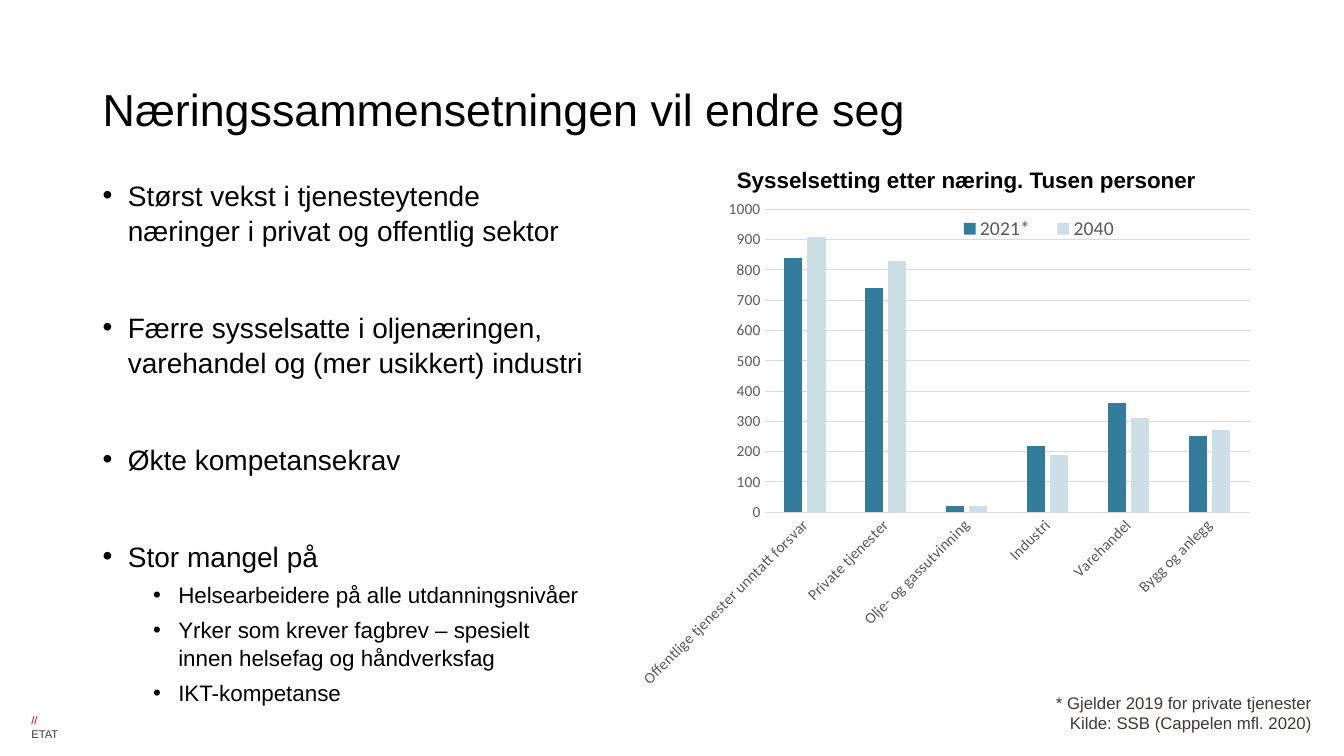
from lxml import etree
from pptx import Presentation
from pptx.chart.data import CategoryChartData
from pptx.dml.color import RGBColor
from pptx.enum import chart as kinds, text as enums
from pptx.oxml import ns
from pptx.util import Inches, Pt

BLACK = RGBColor(0, 0, 0)
BROWN = RGBColor(0x3E, 0x38, 0x32)
RED = RGBColor(0xC3, 0, 0)
GREY = RGBColor(0x59, 0x59, 0x59)
RULE = RGBColor(0xD9, 0xD9, 0xD9)
TEAL = RGBColor(0x33, 0x7C, 0x9B)
PALE = RGBColor(0xCC, 0xDE, 0xE6)

POINTS = [
    (0, "Størst vekst i tjenesteytende næringer i privat og offentlig sektor"),
    (0, "Færre sysselsatte i oljenæringen, varehandel og (mer usikkert) industri"),
    (0, "Økte kompetansekrav"),
    (0, "Stor mangel på"),
    (1, "Helsearbeidere på alle utdanningsnivåer"),
    (1, "Yrker som krever fagbrev – spesielt innen helsefag og håndverksfag"),
    (1, "IKT-kompetanse"),
]
SECTORS = ["Offentlige tjenester unntatt forsvar", "Private tjenester",
           "Olje- og gassutvinning", "Industri", "Varehandel", "Bygg og anlegg"]
YEARS = [("2021*", TEAL, (840, 740, 20, 220, 360, 250)),
         ("2040", PALE, (910, 830, 20, 190, 310, 270))]


def set_font(font, size, color, name="Arial", bold=False):
    font.size, font.name, font.bold = Pt(size), name, bold
    font.color.rgb = color


def add_frame(slide, box, inset=(0.1, 0.05), anchor=enums.MSO_ANCHOR.TOP):
    frame = slide.shapes.add_textbox(*map(Inches, box)).text_frame
    frame.word_wrap = True
    frame.vertical_anchor = anchor
    frame.margin_left = frame.margin_right = Inches(inset[0])
    frame.margin_top = frame.margin_bottom = Inches(inset[1])
    return frame


def write(para, words, size=12, color=BLACK, bold=False, align=None,
          before=0, spacing=None):
    run = para.add_run()
    run.text = words
    set_font(run.font, size, color, bold=bold)
    para.alignment = align
    para.space_before = Pt(before)
    if spacing:
        para.line_spacing = spacing
    return run


def add_bullet(para, left):
    props = para._p.get_or_add_pPr()
    props.set("marL", str(Inches(left)))
    props.set("indent", str(Inches(-0.25)))
    font = etree.SubElement(props, ns.qn("a:buFont"))
    font.set("typeface", "Arial")
    etree.SubElement(props, ns.qn("a:buChar")).set("char", "•")


def add_title(slide, box):
    frame = add_frame(slide, box, anchor=enums.MSO_ANCHOR.MIDDLE)
    write(frame.paragraphs[0], "Næringssammensetningen vil endre seg",
          size=32, spacing=0.9)


def add_points(slide, box):
    frame = add_frame(slide, box)
    for i, (level, words) in enumerate(POINTS):
        para = frame.paragraphs[0] if i == 0 else frame.add_paragraph()
        para.level = level
        add_bullet(para, 0.75 if level else 0.25)
        before = 0 if i == 0 else 5 if level else 44
        write(para, words, size=16 if level else 20, before=before, spacing=1.05)


def place(parent, index, left, top, width, height, inner=False):
    """Fix the layout of a chart part, as shares of the chart's size."""
    for old in parent.findall(ns.qn("c:layout")):
        parent.remove(old)
    layout = etree.Element(ns.qn("c:layout"))
    manual = etree.SubElement(layout, ns.qn("c:manualLayout"))
    parts = [("layoutTarget", "inner")] if inner else []
    parts += [("xMode", "edge"), ("yMode", "edge"),
              ("x", left), ("y", top), ("w", width), ("h", height)]
    for tag, val in parts:
        etree.SubElement(manual, ns.qn("c:" + tag)).set("val", str(val))
    parent.insert(index, layout)


def style_axes(chart):
    cat, val = chart.category_axis, chart.value_axis
    for axis in (cat, val):
        axis.major_tick_mark = axis.minor_tick_mark = kinds.XL_TICK_MARK.NONE
        set_font(axis.tick_labels.font, 11, GREY, "Calibri")
    body = cat._element.find(".//" + ns.qn("a:bodyPr"))
    body.set("rot", "-2700000")
    body.set("vert", "horz")
    val.minimum_scale, val.maximum_scale, val.major_unit = 0, 1000, 100
    val.tick_labels.number_format = "0"
    val.tick_labels.number_format_is_linked = False
    val.format.line.fill.background()
    val.has_major_gridlines = True
    for line in (cat.format.line, val.major_gridlines.format.line):
        line.color.rgb, line.width = RULE, Pt(0.75)


def add_jobs(slide, box):
    data = CategoryChartData()
    data.categories = SECTORS
    for year, _, jobs in YEARS:
        data.add_series(year, jobs)
    chart = slide.shapes.add_chart(kinds.XL_CHART_TYPE.COLUMN_CLUSTERED,
                                   *map(Inches, box), data).chart
    chart.has_title = False
    set_font(chart.font, 11, BLACK, "Calibri")
    style_axes(chart)

    # Columns
    plot = chart.plots[0]
    plot.gap_width, plot.overlap, plot.vary_by_categories = 219, -27, False
    for series, (_, color, _) in zip(plot.series, YEARS):
        series.format.fill.solid()
        series.format.fill.fore_color.rgb = color
    area = chart._chartSpace.find(".//" + ns.qn("c:plotArea"))
    place(area, 0, 0.22, 0.04, 0.76, 0.55, inner=True)

    # Legend
    chart.has_legend = True
    legend = chart.legend
    legend.position = kinds.XL_LEGEND_POSITION.BOTTOM
    legend.include_in_layout = False
    set_font(legend.font, 14, GREY, "Calibri")
    place(legend._element, 1, 0.5, 0.05, 0.3, 0.05)


def add_panel(slide, left, top):
    # Chart under its heading
    add_jobs(slide, (left, top + 0.26, 6.33, 5.46))
    head = add_frame(slide, (left + 1.02, top, 5.22, 0.37))
    write(head.paragraphs[0], "Sysselsetting etter næring. Tusen personer",
          size=16, bold=True)
    # Source note
    note = add_frame(slide, (left + 3.72, top + 5.22, 3.2, 0.5))
    for para, words in ((note.paragraphs[0], "* Gjelder 2019 for private tjenester"),
                        (note.add_paragraph(), "Kilde: SSB (Cappelen mfl. 2020)")):
        write(para, words, color=BROWN, align=enums.PP_ALIGN.RIGHT)


def add_footer(slide, box):
    frame = add_frame(slide, box, inset=(0, 0))
    frame.word_wrap = False
    para = frame.paragraphs[0]
    para._p.get_or_add_pPr().set("marL", str(Inches(0.04)))
    write(para, "// ", size=8, color=RED)
    write(para, "ETAT", size=8, color=BROWN)


def main():
    deck = Presentation()
    deck.slide_width, deck.slide_height = Inches(13.33), Inches(7.5)
    slide = deck.slides.add_slide(deck.slide_layouts[6])
    add_footer(slide, (0.27, 7.08, 0.39, 0.13))
    add_points(slide, (0.92, 1.7, 5.03, 5.49))
    add_title(slide, (0.92, 0.53, 9.35, 1.17))
    add_panel(slide, 6.19, 1.6)
    deck.save("out.pptx")


if __name__ == "__main__":
    main()
